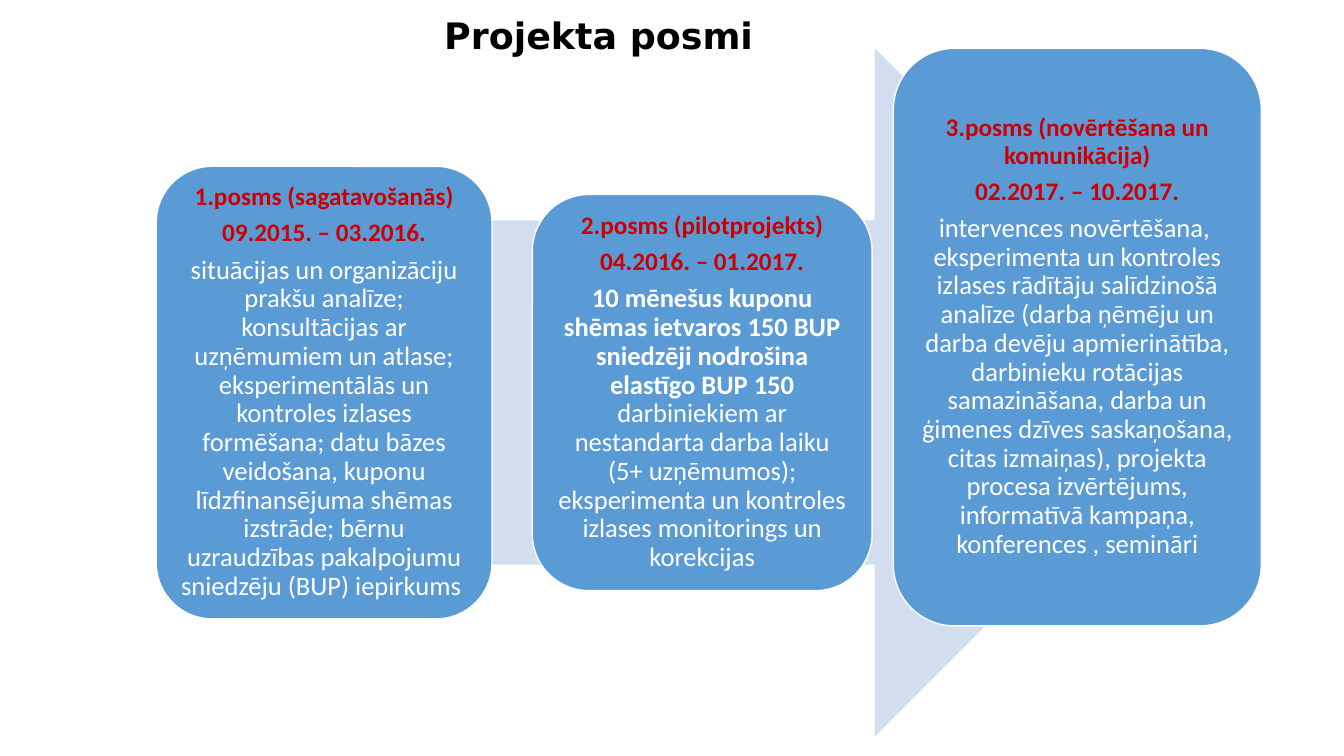
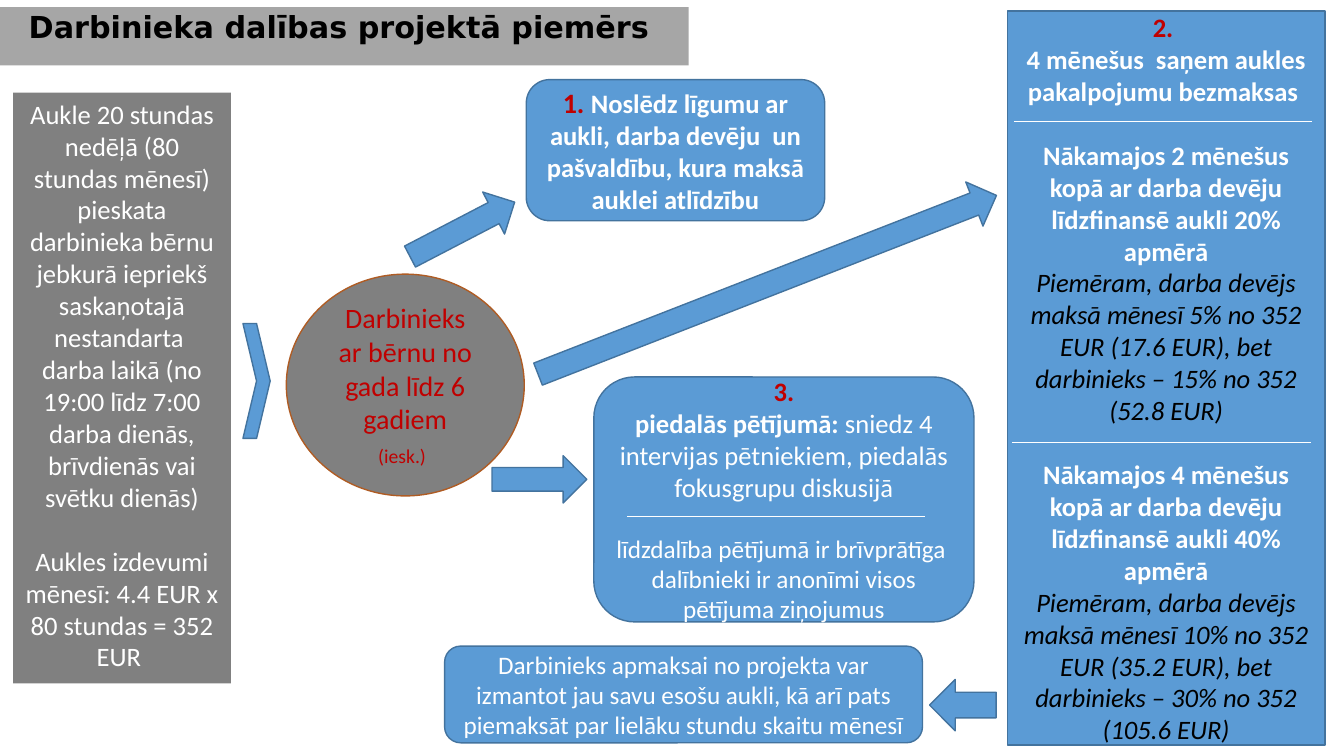
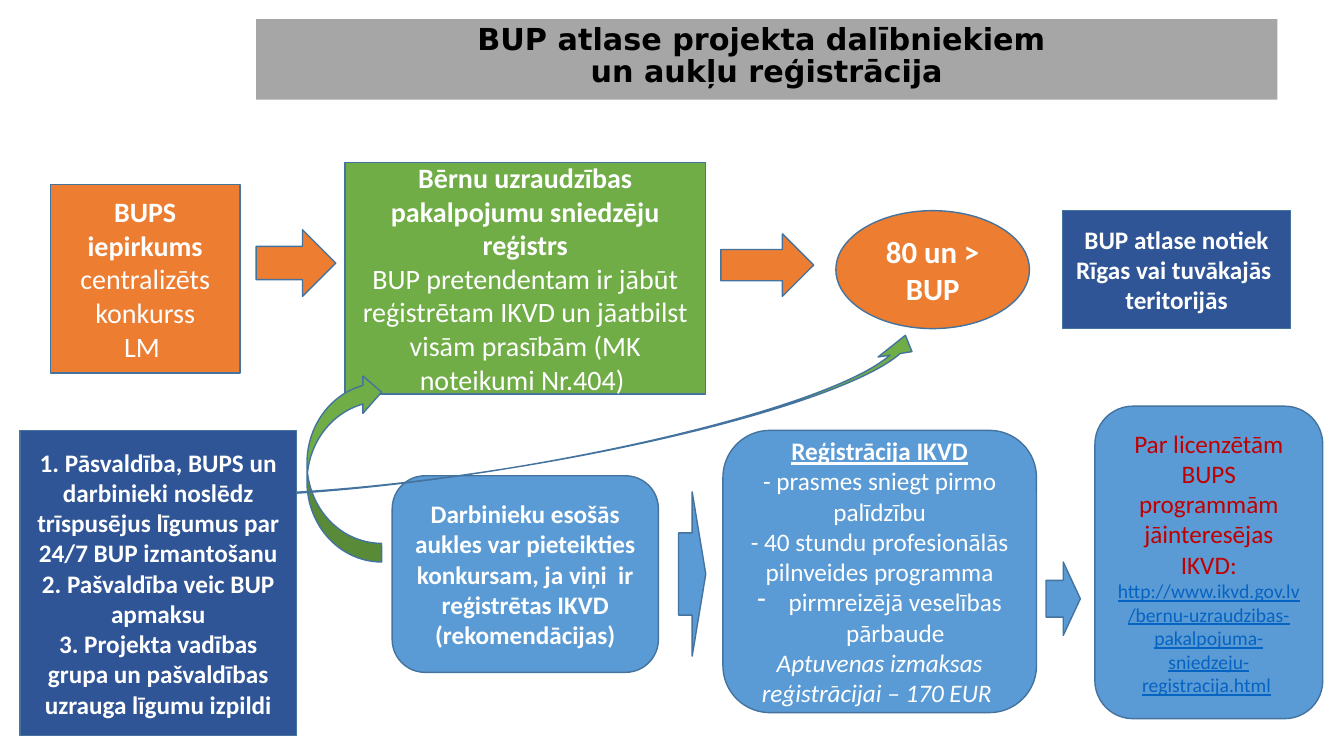
from dataclasses import dataclass

from lxml.etree import SubElement
from pptx import Presentation
from pptx.dml.color import RGBColor
from pptx.enum.shapes import MSO_CONNECTOR, MSO_SHAPE as Kind
from pptx.enum.text import MSO_ANCHOR as Anchor, PP_ALIGN as Align
from pptx.oxml.ns import qn
from pptx.util import Pt

EMU_PER_PX = 9144


def px(length: int) -> int:
    return length * EMU_PER_PX


@dataclass(frozen=True)
class Theme:
    white: str = "FFFFFF"
    black: str = "000000"
    blue: str = "5B9BD5"
    pale_blue: str = "D2DEEF"
    navy: str = "2F5597"
    outline: str = "43739E"
    orange: str = "ED7D31"
    rust: str = "AF5C24"
    green: str = "70AD47"
    gray: str = "808080"
    band: str = "A6A6A6"
    red: str = "C00000"
    stage_red: str = "CC0000"
    link: str = "0563C1"
    body_font: str = "Calibri"
    title_font: str = "DejaVu Sans"
    opening_title: float = 26
    title: float = 21.6
    figure: float = 22
    large: float = 20
    body: float = 19
    small: float = 18
    note: float = 14


THEME = Theme()


@dataclass(frozen=True)
class Run:
    text: str
    size: float = THEME.body
    color: str = THEME.white
    bold: bool = False
    italic: bool = False
    underline: bool = False
    font: str = THEME.body_font


@dataclass(frozen=True)
class Para:
    runs: tuple[Run, ...]
    before: float = 0
    after: float = 0
    spacing: float = 1.0
    bullet: str = ""


@dataclass(frozen=True)
class Block:
    kind: Kind
    left: int
    top: int
    width: int
    height: int
    fill: str = THEME.blue
    line: str | None = THEME.outline
    paragraphs: tuple[Para, ...] = ()
    rotation: float = 0
    adjustments: tuple[float, ...] = ()
    anchor: Anchor = Anchor.MIDDLE
    margins: tuple[int, int] = (10, 5)


@dataclass(frozen=True)
class Title:
    lines: tuple[str, ...]
    left: int
    top: int
    width: int
    height: int
    size: float = THEME.title
    fill: str | None = THEME.band


@dataclass(frozen=True)
class Separator:
    left: int
    right: int
    y: int


@dataclass(frozen=True)
class Stage:
    left: int
    top: int
    width: int
    height: int
    name: str
    dates: str
    details: tuple[Run, ...]


def para(text: str, size: float = THEME.body, before: float = 0, bullet: str = "",
         **formats) -> Para:
    return Para((Run(text, size, **formats),), before=before, bullet=bullet)


def rgb(color: str) -> RGBColor:
    return RGBColor.from_string(color)


def set_formats(target, formats: dict) -> None:
    for name, value in formats.items():
        setattr(target, name, value)


def add_bullet(paragraph, character: str) -> None:
    properties = paragraph._p.get_or_add_pPr()
    properties.set("marL", str(px(31)))
    properties.set("indent", str(-px(31)))
    SubElement(properties, qn("a:buChar")).set("char", character)


def write_text(text_frame, paragraphs: tuple[Para, ...], anchor: Anchor,
               margins: tuple[int, int]) -> None:
    side, edge = map(px, margins)
    set_formats(text_frame, {
        "word_wrap": True, "vertical_anchor": anchor,
        "margin_left": side, "margin_right": side,
        "margin_top": edge, "margin_bottom": edge,
    })
    for index, item in enumerate(paragraphs):
        paragraph = text_frame.add_paragraph() if index else text_frame.paragraphs[0]
        if item.bullet:
            add_bullet(paragraph, item.bullet)
        set_formats(paragraph, {
            "alignment": Align.CENTER, "line_spacing": item.spacing,
            "space_before": Pt(item.before), "space_after": Pt(item.after),
        })
        for piece in item.runs:
            run = paragraph.add_run()
            run.text = piece.text
            set_formats(run.font, {
                "name": piece.font, "size": Pt(piece.size), "bold": piece.bold,
                "italic": piece.italic, "underline": piece.underline,
            })
            run.font.color.rgb = rgb(piece.color)


def paint(shape, fill: str | None) -> None:
    if fill:
        shape.fill.solid()
        shape.fill.fore_color.rgb = rgb(fill)
    else:
        shape.fill.background()


def draw_title(slide, title: Title) -> None:
    shape = slide.shapes.add_textbox(*map(px, (title.left, title.top, title.width, title.height)))
    paint(shape, title.fill)
    paragraphs = tuple(
        Para((Run(line, title.size, THEME.black, True, font=THEME.title_font),), spacing=0.9)
        for line in title.lines)
    write_text(shape.text_frame, paragraphs, Anchor.TOP, (10, 5))


def draw_block(slide, block: Block) -> None:
    shape = slide.shapes.add_shape(
        block.kind, *map(px, (block.left, block.top, block.width, block.height)))
    shape.shadow.inherit = False
    shape.rotation = block.rotation
    for index, value in enumerate(block.adjustments):
        shape.adjustments[index] = value
    paint(shape, block.fill)
    if block.line:
        shape.line.color.rgb = rgb(block.line)
        shape.line.width = Pt(1)
    else:
        shape.line.fill.background()
    if block.paragraphs:
        write_text(shape.text_frame, block.paragraphs, block.anchor, block.margins)


def draw_separator(slide, separator: Separator) -> None:
    connector = slide.shapes.add_connector(
        MSO_CONNECTOR.STRAIGHT,
        *map(px, (separator.left, separator.y, separator.right, separator.y)))
    connector.line.color.rgb = rgb(THEME.white)
    connector.line.width = Pt(0.5)
    SubElement(connector._element.spPr, qn("a:effectLst"))


def stage_block(stage: Stage) -> Block:
    heading = tuple((Run(text, THEME.small, THEME.stage_red, True),)
                    for text in (stage.name, stage.dates))
    paragraphs = tuple(Para(runs, after=6.3, spacing=0.9)
                       for runs in (*heading, stage.details))
    return Block(Kind.ROUNDED_RECTANGLE, stage.left, stage.top, stage.width, stage.height,
                 line=THEME.white, paragraphs=paragraphs, margins=(7, 7))


STAGES = (
    Stage(155, 165, 333, 449, "1.posms (sagatavošanās)", "09.2015. – 03.2016.", (
        Run("situācijas un organizāciju prakšu analīze; konsultācijas ar uzņēmumiem un atlase; "
            "eksperimentālās un kontroles izlases formēšana; datu bāzes veidošana, kuponu "
            "līdzfinansējuma shēmas izstrāde; bērnu uzraudzības pakalpojumu sniedzēju (BUP) "
            "iepirkums "),)),
    Stage(528, 193, 337, 393, "2.posms (pilotprojekts)", "04.2016. – 01.2017.", (
        Run("10 mēnešus kuponu shēmas ietvaros 150 BUP sniedzēji nodrošina elastīgo BUP 150 ",
            bold=True),
        Run("darbiniekiem ar nestandarta darba laiku (5+ uzņēmumos); eksperimenta un kontroles "
            "izlases monitorings un korekcijas"))),
    Stage(886, 48, 365, 573, "3.posms (novērtēšana un komunikācija)", "02.2017. – 10.2017.", (
        Run("intervences novērtēšana,  eksperimenta un kontroles izlases rādītāju salīdzinošā "
            "analīze (darba ņēmēju un darba devēju apmierinātība, darbinieku rotācijas "
            "samazināšana, darba un ģimenes dzīves saskaņošana, citas izmaiņas), projekta "
            "procesa izvērtējums, informatīvā kampaņa, konferences , semināri"),)),
)

STAGES_SLIDE = (
    Title(("Projekta posmi",), 307, 13, 574, 64, THEME.opening_title, None),
    Block(Kind.RIGHT_ARROW, 216, 48, 993, 683, THEME.pale_blue, None),
    *map(stage_block, STAGES),
)

EXAMPLE_SLIDE = (
    Title(("Darbinieka dalības projektā piemērs ",), 0, 7, 683, 58),
    Block(Kind.RECTANGLE, 13, 92, 216, 586, THEME.gray, None, (
        para("Aukle 20 stundas nedēļā (80 stundas mēnesī) pieskata darbinieka bērnu jebkurā "
             "iepriekš saskaņotajā nestandarta  darba laikā (no 19:00 līdz 7:00 darba dienās, "
             "brīvdienās vai svētku dienās)"),
        para("Aukles izdevumi mēnesī: 4.4 EUR x 80 stundas = 352 EUR ", before=23),
    ), anchor=Anchor.TOP),
    Block(Kind.FLOWCHART_ALTERNATE_PROCESS, 522, 79, 296, 140, paragraphs=(
        Para((Run("1. ", THEME.large, THEME.red, True),
              Run("Noslēdz līgumu ar aukli, darba devēju  un pašvaldību, kura maksā auklei "
                  "atlīdzību", bold=True))),)),
    Block(Kind.FLOWCHART_ALTERNATE_PROCESS, 441, 641, 474, 96, paragraphs=(
        para("Darbinieks apmaksai no projekta var izmantot jau savu esošu aukli, kā arī pats "
             "piemaksāt par lielāku stundu skaitu mēnesī", THEME.small),)),
    Block(Kind.RECTANGLE, 999, 11, 315, 728, paragraphs=(
        para("2. ", color=THEME.red, bold=True),
        para("4 mēnešus  saņem aukles pakalpojumu bezmaksas ", bold=True),
        para("Nākamajos 2 mēnešus kopā ar darba devēju līdzfinansē aukli 20% apmērā",
             before=23, bold=True),
        para("Piemēram, darba devējs maksā mēnesī 5% no 352 EUR (17.6 EUR), bet darbinieks – "
             "15% no 352 (52.8 EUR)", color=THEME.black, italic=True),
        para("Nākamajos 4 mēnešus kopā ar darba devēju līdzfinansē aukli 40% apmērā",
             before=23, bold=True),
        para("Piemēram, darba devējs maksā mēnesī 10% no 352 EUR (35.2 EUR), bet darbinieks – "
             "30% no 352 (105.6 EUR)", color=THEME.black, italic=True),
    ), margins=(10, 0)),
    Block(Kind.CHEVRON, 241, 321, 27, 114),
    Block(Kind.OVAL, 284, 272, 236, 220, THEME.gray, THEME.rust, (
        para("Darbinieks ar bērnu no gada līdz 6 gadiem", THEME.large, color=THEME.red),
        Para((Run("(iesk.)", THEME.note, THEME.red), Run(" ", THEME.large, THEME.red))))),
    Block(Kind.FLOWCHART_ALTERNATE_PROCESS, 589, 374, 377, 243, paragraphs=(
        para("3.", color=THEME.red, bold=True),
        Para((Run("piedalās pētījumā: ", bold=True),
              Run("sniedz 4 intervijas pētniekiem, piedalās fokusgrupu diskusijā"))),
        para("līdzdalība pētījumā ir brīvprātīga ", THEME.small, before=22),
        para("dalībnieki ir anonīmi visos pētījuma ziņojumus", THEME.small))),
    Block(Kind.LEFT_ARROW, 922, 674, 66, 51),
    Block(Kind.LEFT_ARROW, 400, 204, 117, 47, rotation=152.5),
    Block(Kind.LEFT_ARROW, 517, 259, 488, 47, rotation=158.7),
    Block(Kind.LEFT_ARROW, 488, 452, 94, 47, rotation=180),
    Separator(1006, 1301, 120),
    Separator(1004, 1300, 439),
    Separator(622, 917, 512),
)

REGISTRATION_SLIDE = (
    Title(("BUP atlase projekta dalībniekiem ", "un aukļu reģistrācija"), 254, 19, 1013, 80),
    Block(Kind.FLOWCHART_PROCESS, 50, 183, 188, 187, THEME.orange, paragraphs=(
        para("BUPS iepirkums", THEME.large, bold=True),
        para("centralizēts konkurss", THEME.large),
        para("LM ", THEME.large))),
    Block(Kind.RIGHT_ARROW, 254, 228, 79, 66, THEME.orange),
    Block(Kind.FLOWCHART_PROCESS, 342, 161, 358, 230, THEME.green, paragraphs=(
        para("Bērnu uzraudzības pakalpojumu sniedzēju reģistrs", THEME.large, bold=True),
        para("BUP pretendentam ir jābūt reģistrētam IKVD un jāatbilst visām prasībām "
             "(MK noteikumi Nr.404) ", THEME.large))),
    Block(Kind.RECTANGLE, 1054, 209, 226, 117, THEME.navy, paragraphs=(
        para("BUP atlase notiek Rīgas vai tuvākajās  teritorijās", THEME.small, bold=True),)),
    Block(Kind.RIGHT_ARROW, 715, 232, 92, 62, THEME.orange),
    Block(Kind.FLOWCHART_CONNECTOR, 829, 209, 192, 117, THEME.orange, paragraphs=(
        para("80 un > BUP", THEME.figure, bold=True),)),
    Block(Kind.FLOWCHART_ALTERNATE_PROCESS, 389, 472, 264, 195, paragraphs=(
        para("Darbinieku esošās aukles var pieteikties konkursam, ja viņi  ir reģistrētas IKVD",
             THEME.small, bold=True),
        para("(rekomendācijas)", THEME.small, bold=True))),
    Block(Kind.CURVED_DOWN_ARROW, 248, 427, 187, 74, THEME.green, rotation=270),
    Block(Kind.UP_ARROW, 605, 556, 163, 27, rotation=90),
    Block(Kind.FLOWCHART_ALTERNATE_PROCESS, 717, 427, 311, 280, paragraphs=(
        para("Reģistrācija IKVD", THEME.small, bold=True, underline=True),
        para("- prasmes sniegt pirmo palīdzību", THEME.small),
        para("- 40 stundu profesionālās pilnveides programma", THEME.small),
        para("pirmreizējā veselības pārbaude", THEME.small, bullet="-"),
        para("Aptuvenas izmaksas reģistrācijai – 170 EUR ", THEME.small, italic=True))),
    Block(Kind.UP_ARROW, 1018, 577, 73, 34, rotation=90),
    Block(Kind.FLOWCHART_ALTERNATE_PROCESS, 1086, 403, 226, 310, paragraphs=(
        Para((Run("Par licenzētām BUPS programmām jāinteresējas IKVD: ",
                  THEME.small, THEME.red),
              Run("http://www.ikvd.gov.lv/bernu-uzraudzibas-pakalpojuma-sniedzeju-"
                  "registracija.html", THEME.note, THEME.link, underline=True),
              Run(" ", THEME.note, THEME.red))),)),
    Block(Kind.CURVED_RIGHT_ARROW, 468, 7, 68, 847, THEME.green, rotation=260.9,
          adjustments=(0.15, 0.5, 0.25)),
    Block(Kind.FLOWCHART_PROCESS, 20, 427, 274, 303, THEME.navy, paragraphs=(
        para("1. Pāsvaldība, BUPS un darbinieki noslēdz trīspusējus līgumus par 24/7 BUP "
             "izmantošanu", THEME.small, bold=True),
        para("2. Pašvaldība veic BUP apmaksu", THEME.small, bold=True),
        para("3. Projekta vadības grupa un pašvaldības uzrauga līgumu izpildi",
             THEME.small, bold=True))),
)

PAINTERS = {Title: draw_title, Block: draw_block, Separator: draw_separator}


def main() -> None:
    presentation = Presentation()
    set_formats(presentation, {"slide_width": px(1333), "slide_height": px(750)})
    blank = presentation.slide_layouts[6]
    for items in (STAGES_SLIDE, EXAMPLE_SLIDE, REGISTRATION_SLIDE):
        slide = presentation.slides.add_slide(blank)
        for item in items:
            PAINTERS[type(item)](slide, item)
    presentation.save("out.pptx")


if __name__ == "__main__":
    main()
